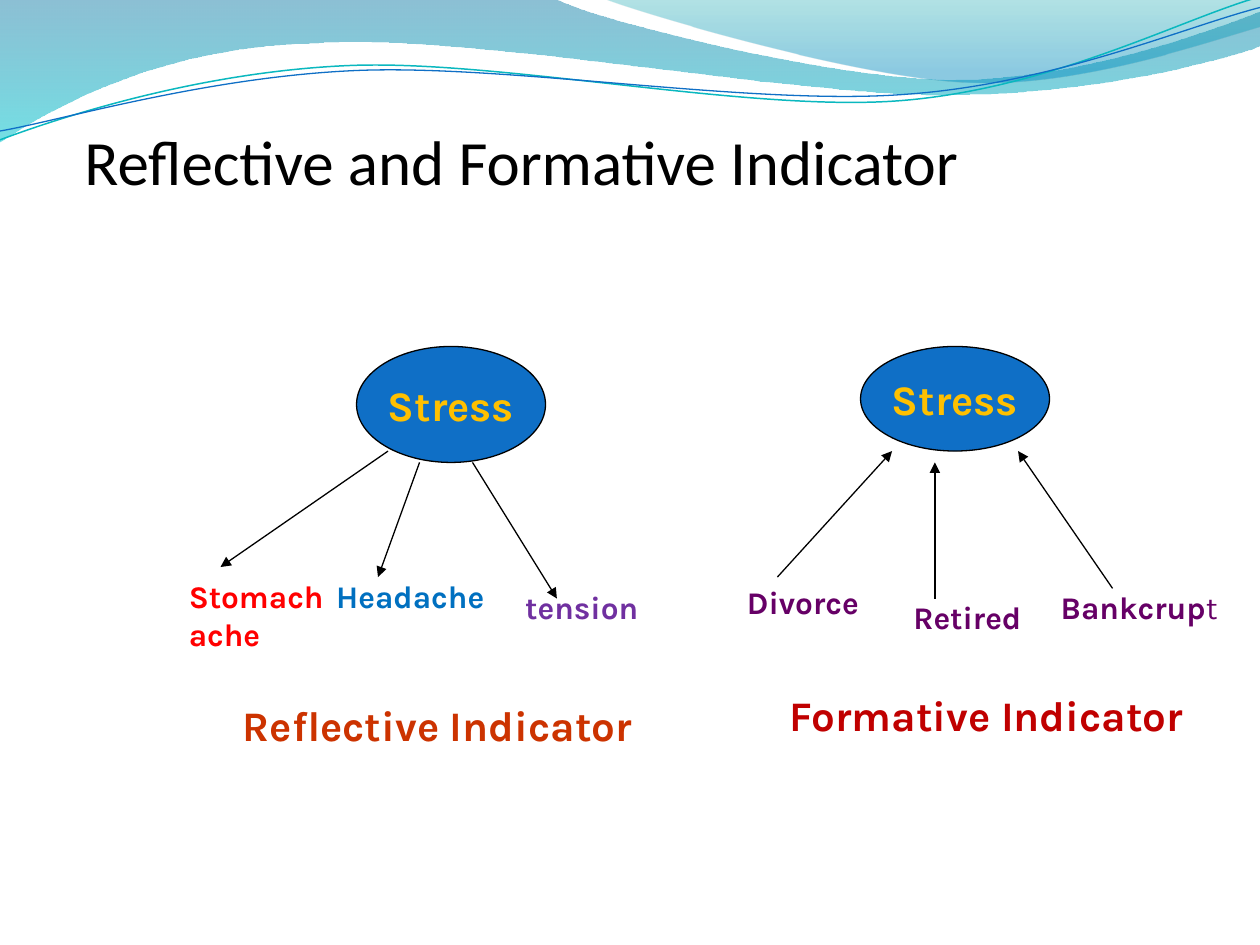
import math
import pptx
import pptx.util
import pptx.dml.color
import pptx.enum.shapes
import pptx.enum.text
import pptx.oxml
import pptx.oxml.ns

Inches = pptx.util.Inches
Pt = pptx.util.Pt
ANCHOR = pptx.enum.text.MSO_ANCHOR
ALIGN = pptx.enum.text.PP_ALIGN
NS = pptx.oxml.ns.nsdecls("a")
TILT = 2.7

HUES = {
    "black": "000000", "blue": "0F6FC6", "gold": "FFC000", "red": "FF0000",
    "sky": "0070C0", "violet": "7030A0", "plum": "660066",
    "rust": "CC3300", "wine": "C00000", "teal": "0AB8BF",
    "deep": "0074A1", "aqua": "00C6CF", "sea": "00A1A9", "ocean": "008BBF",
}


def turn(x, y, mid, angle):
    """Turn a point clockwise about mid."""
    a, dx, dy = math.radians(angle), x - mid[0], y - mid[1]
    return (mid[0] + dx * math.cos(a) - dy * math.sin(a),
            mid[1] + dx * math.sin(a) + dy * math.cos(a))


class Deck:
    def __init__(self, wide, high, font):
        self.prs = pptx.Presentation()
        self.prs.slide_width, self.prs.slide_height = Inches(wide), Inches(high)
        self.slide = self.prs.slides.add_slide(self.prs.slide_layouts[6])
        self.font = font

    def hue(self, name):
        return pptx.dml.color.RGBColor.from_string(HUES[name])

    def run(self, para, text, size, hue, bold=True, font=None):
        run = para.add_run()
        run.text = text
        run.font.size, run.font.bold = Pt(size), bold
        run.font.name = font or self.font
        run.font.color.rgb = self.hue(hue)

    def label(self, x, y, w, h, lines, size, hue):
        """Each line is a list of (text, bold) runs."""
        box = self.slide.shapes.add_textbox(*map(Inches, (x, y, w, h)))
        frame = box.text_frame
        frame.word_wrap = False
        frame.auto_size = pptx.enum.text.MSO_AUTO_SIZE.SHAPE_TO_FIT_TEXT
        for i, line in enumerate(lines):
            para = frame.add_paragraph() if i else frame.paragraphs[0]
            for text, bold in line:
                self.run(para, text, size, hue, bold)

    def title(self, x, y, w, h, text):
        box = self.slide.shapes.add_textbox(*map(Inches, (x, y, w, h)))
        frame = box.text_frame
        frame.word_wrap = True
        frame.vertical_anchor = ANCHOR.BOTTOM
        frame.margin_left = frame.margin_right = 0
        frame.margin_bottom = Inches(0.6)
        self.run(frame.paragraphs[0], text, 36, "black", False, "Calibri")

    def oval(self, x, y, w, h, text):
        kind = pptx.enum.shapes.MSO_SHAPE.OVAL
        oval = self.slide.shapes.add_shape(kind, *map(Inches, (x, y, w, h)))
        oval.shadow.inherit = False
        oval.fill.solid()
        oval.fill.fore_color.rgb = self.hue("blue")
        oval.line.color.rgb = self.hue("black")
        oval.line.width = Pt(0.75)
        frame = oval.text_frame
        frame.word_wrap = False
        frame.vertical_anchor = ANCHOR.MIDDLE
        frame.paragraphs[0].alignment = ALIGN.CENTER
        self.run(frame.paragraphs[0], text, 24, "gold")

    def arrow(self, x1, y1, x2, y2):
        kind = pptx.enum.shapes.MSO_CONNECTOR.STRAIGHT
        line = self.slide.shapes.add_connector(kind, *map(Inches, (x1, y1, x2, y2)))
        line.line.color.rgb = self.hue("black")
        line.line.width = Pt(0.75)
        line.line._get_or_add_ln().append(
            pptx.oxml.parse_xml(f'<a:tailEnd {NS} type="triangle"/>'))
        line._element.spPr.append(pptx.oxml.parse_xml(f"<a:effectLst {NS}/>"))

    def free(self, start, parts, close):
        """A part is a list of points: one for a line, three for a curve."""
        pen = self.slide.shapes.build_freeform(*map(Inches, start), scale=1.0)
        pen.add_line_segments(
            [tuple(map(Inches, p)) for part in parts for p in part], close=close)
        shape = pen.convert_to_shape()
        shape.shadow.inherit = False
        # Join each three points of a curve into one cubic segment
        segs = iter(list(shape._element.iter(pptx.oxml.ns.qn("a:lnTo"))))
        for part in parts:
            group = [next(segs) for _ in part]
            if len(group) == 3:
                curve = pptx.oxml.parse_xml(f"<a:cubicBezTo {NS}/>")
                group[0].addprevious(curve)
                for seg in group:
                    curve.append(seg[0])
                    seg.getparent().remove(seg)
        return shape

    def band(self, start, parts, stops):
        """A filled wave; a stop is (place, hue, opacity in percent)."""
        band = self.free(start, parts, True)
        band.line.fill.background()
        band.fill.gradient()
        band.fill.gradient_angle = 270
        for stop, (place, hue, alpha) in zip(band.fill.gradient_stops, stops):
            stop.position = place
            stop.color.rgb = self.hue(hue)
            tint = stop.color._xFill.find(pptx.oxml.ns.qn("a:srgbClr"))
            tint.append(pptx.oxml.parse_xml(f'<a:alpha {NS} val="{alpha * 1000}"/>'))

    def wave(self, start, parts, mid, hue, width):
        """A tilted line, laid out level and then turned about mid."""
        level = [[turn(*p, mid, TILT) for p in part] for part in parts]
        wave = self.free(turn(*start, mid, TILT), level, False)
        wave.rotation = 360 - TILT
        wave.fill.background()
        wave.line.color.rgb = self.hue(hue)
        wave.line.width = Pt(width)


def main():
    deck = Deck(10, 7.5, "Karla")

    # Waves along the top
    deck.band((0, 0), [
        [(4.4, -0.01)],
        [(4.76, 0.17), (6.64, 0.63), (7.58, 0.63)],
        [(8.53, 0.63), (9.58, 0.26), (10, 0.09)],
        [(10.01, 0.36)],
        [(9.83, 0.44), (8.7, 0.76), (7.46, 0.75)],
        [(6.22, 0.75), (3.82, 0.28), (2.57, 0.34)],
        [(1.29, 0.36), (0.46, 0.83), (-0.01, 1.13)],
    ], [(0, "deep", 45), (1, "aqua", 55)])
    deck.band((4.79, -0.01), [
        [(5.09, 0.11), (6.82, 0.62), (7.69, 0.65)],
        [(8.56, 0.69), (9.61, 0.32), (10, 0.21)],
        [(10, 0)],
    ], [(0, "sea", 30), (0.8, "ocean", 45)])
    deck.wave((0, 1.11), [
        [(0.48, 0.93), (1.58, 0.57), (2.77, 0.52)],
        [(3.95, 0.47), (5.93, 0.89), (7.13, 0.8)],
        [(8.33, 0.71), (9.38, 0.15), (9.98, -0.02)],
    ], (4.99, 0.58), "teal", 0.85)
    deck.wave((0, 1.04), [
        [(0.47, 0.96), (1.64, 0.61), (2.83, 0.56)],
        [(4.03, 0.51), (5.97, 0.84), (7.17, 0.75)],
        [(8.36, 0.67), (9.41, 0.21), (10, 0.06)],
    ], (5, 0.59), "blue", 0.75)

    deck.title(0.67, 0.42, 7.51, 1.75, "Reflective and Formative Indicator")

    # The two constructs
    for x, h in ((2.83, 0.92), (6.83, 0.83)):
        deck.oval(x, 2.75, 1.5, h, "Stress")

    # Indicators
    for x, y, w, h, lines, hue in (
        (1.4, 4.53, 1.3, 0.7, [[("Stomach", True)], [("ache", True)]], "red"),
        (2.57, 4.53, 1.44, 0.4, [[("Headache", True)]], "sky"),
        (4.07, 4.62, 1.13, 0.4, [[("tension", True)]], "violet"),
        (5.83, 4.58, 1.15, 0.4, [[("Divorce", True)]], "plum"),
        (7.15, 4.7, 1.13, 0.4, [[("Retired", True)]], "plum"),
        (8.32, 4.62, 1.47, 0.4, [[("Bankcrup", True), ("t", False)]], "plum"),
    ):
        deck.label(x, y, w, h, lines, 18, hue)

    # Arrows: out of the left oval, into the right one
    for ends in (
        (3.08, 3.58, 1.75, 4.5), (3.33, 3.67, 3, 4.58), (3.75, 3.67, 4.42, 4.75),
        (6.17, 4.58, 7.08, 3.58), (7.42, 4.75, 7.42, 3.67), (8.83, 4.67, 8.08, 3.58),
    ):
        deck.arrow(*ends)

    # Captions
    deck.label(1.83, 5.5, 3.52, 0.5, [[("Reflective Indicator", True)]], 24, "rust")
    deck.label(6.17, 5.42, 3.54, 0.5, [[("Formative Indicator", True)]], 24, "wine")

    deck.prs.save("out.pptx")


if __name__ == "__main__":
    main()
